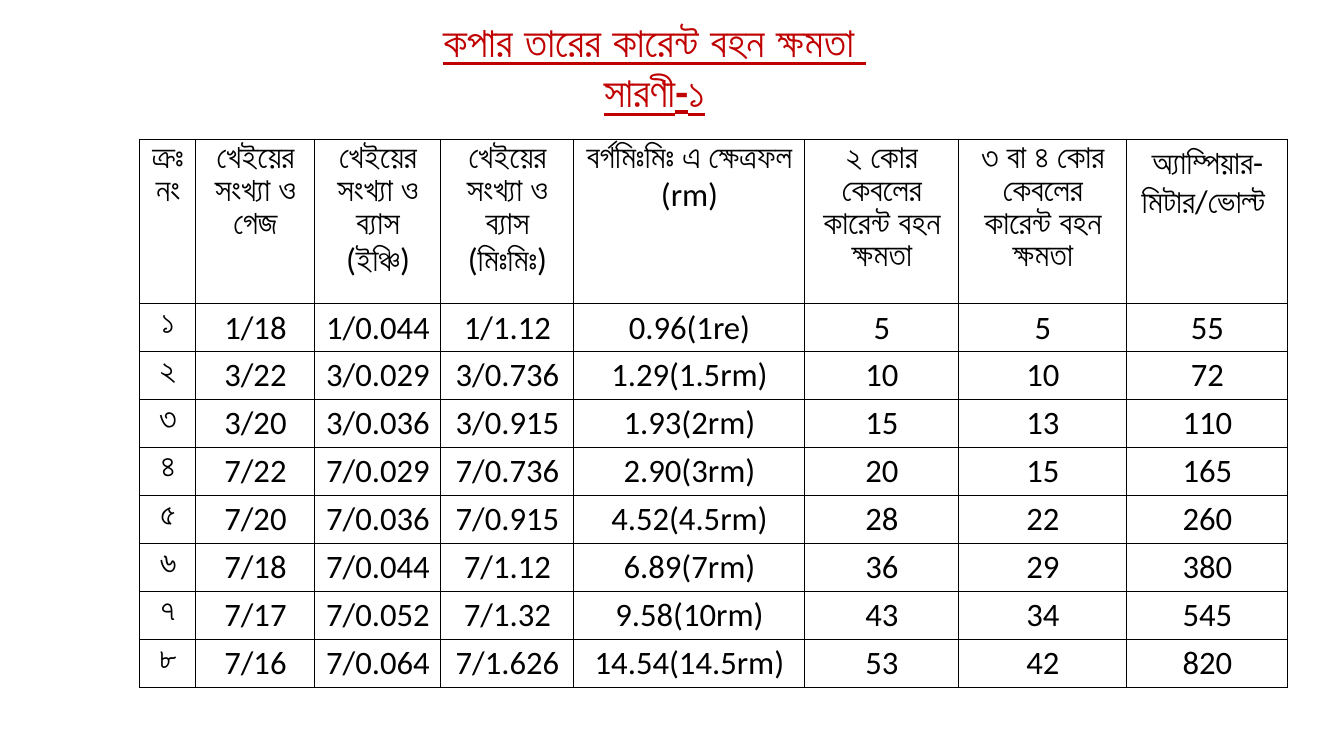
from lxml.etree import SubElement
from pptx import Presentation
from pptx.dml.color import RGBColor
from pptx.enum.text import MSO_ANCHOR, PP_ALIGN
from pptx.oxml.ns import qn
from pptx.util import Pt

PX = 914400 / 84
RED = RGBColor(0xC0, 0x00, 0x00)
BLACK = RGBColor(0x00, 0x00, 0x00)
COLS = [56, 119, 126, 133, 231, 154, 168, 161]
HEAD_H, ROW_H = 165, 47
TITLE = "কপার তারের কারেন্ট বহন ক্ষমতা \nসারণী-১"
HEAD = [
    "ক্রঃ নং", "খেইয়ের সংখ্যা ও গেজ", "খেইয়ের সংখ্যা ও ব্যাস (ইঞ্চি)",
    "খেইয়ের সংখ্যা ও ব্যাস (মিঃমিঃ)", "বর্গমিঃমিঃ এ ক্ষেত্রফল (rm)",
    "২ কোর কেবলের কারেন্ট বহন ক্ষমতা",
    "৩ বা ৪ কোর কেবলের কারেন্ট বহন ক্ষমতা", "অ্যাম্পিয়ার-মিটার/ভোল্ট ",
]
ROWS = [
    ["১", "1/18", "1/0.044", "1/1.12", "0.96(1re)", "5", "5", "55"],
    ["২", "3/22", "3/0.029", "3/0.736", "1.29(1.5rm)", "10", "10", "72"],
    ["৩", "3/20", "3/0.036", "3/0.915", "1.93(2rm)", "15", "13", "110"],
    ["৪", "7/22", "7/0.029", "7/0.736", "2.90(3rm)", "20", "15", "165"],
    ["৫", "7/20", "7/0.036", "7/0.915", "4.52(4.5rm)", "28", "22", "260"],
    ["৬", "7/18", "7/0.044", "7/1.12", "6.89(7rm)", "36", "29", "380"],
    ["৭", "7/17", "7/0.052", "7/1.32", "9.58(10rm)", "43", "34", "545"],
    ["৮", "7/16", "7/0.064", "7/1.626", "14.54(14.5rm)", "53", "42", "820"],
]


def px(n):
    return round(n * PX)


TITLE_FONT = {"name": "Calibri", "size": Pt(36), "bold": True, "underline": True}
CELL_FONT = {"name": "Calibri", "size": Pt(28), "bold": False}
PARA = {"alignment": PP_ALIGN.CENTER, "line_spacing": 1.0}
CELL = {
    "margin_left": px(8), "margin_right": px(8),
    "margin_top": px(4), "margin_bottom": px(4),
    "vertical_anchor": MSO_ANCHOR.TOP,
}


def apply(item, form):
    for key, val in form.items():
        setattr(item, key, val)


def style(frame, form, color):
    for para in frame.paragraphs:
        apply(para, PARA)
        for run in para.runs:
            apply(run.font, form)
            run.font.color.rgb = color


def border(cell):
    props = cell._tc.get_or_add_tcPr()
    for spot, side in enumerate(("lnL", "lnR", "lnT", "lnB")):
        line = SubElement(props, qn("a:" + side), w=str(Pt(1)))
        fill = SubElement(line, qn("a:solidFill"))
        SubElement(fill, qn("a:srgbClr"), val=str(BLACK))
        props.insert(spot, line)


def add_title(slide, x, y, w, h):
    title = slide.shapes.title
    apply(title, {"left": px(x), "top": px(y), "width": px(w), "height": px(h)})
    frame = title.text_frame
    frame.text = TITLE
    apply(frame, {"word_wrap": True, "vertical_anchor": MSO_ANCHOR.TOP})
    style(frame, TITLE_FONT, RED)


def add_grid(slide, x, y, w, h):
    data = [HEAD] + ROWS
    table = slide.shapes.add_table(
        len(data), len(COLS), px(x), px(y), px(w), px(h)).table
    apply(table, {"first_row": False, "horz_banding": False})
    for col, width in zip(table.columns, COLS):
        col.width = px(width)
    for num, (row, texts) in enumerate(zip(table.rows, data)):
        row.height = px(ROW_H if num else HEAD_H)
        for cell, text in zip(row.cells, texts):
            cell.text = text
            apply(cell, CELL)
            cell.fill.background()
            border(cell)
            style(cell.text_frame, CELL_FONT, BLACK)


def main():
    deck = Presentation()
    apply(deck, {"slide_width": px(1344), "slide_height": px(756)})
    slide = deck.slides.add_slide(deck.slide_layouts[5])
    add_title(slide, 140, 11, 1029, 110)
    add_grid(slide, 140, 139, sum(COLS), HEAD_H + ROW_H * len(ROWS))
    deck.save("out.pptx")


if __name__ == "__main__":
    main()
